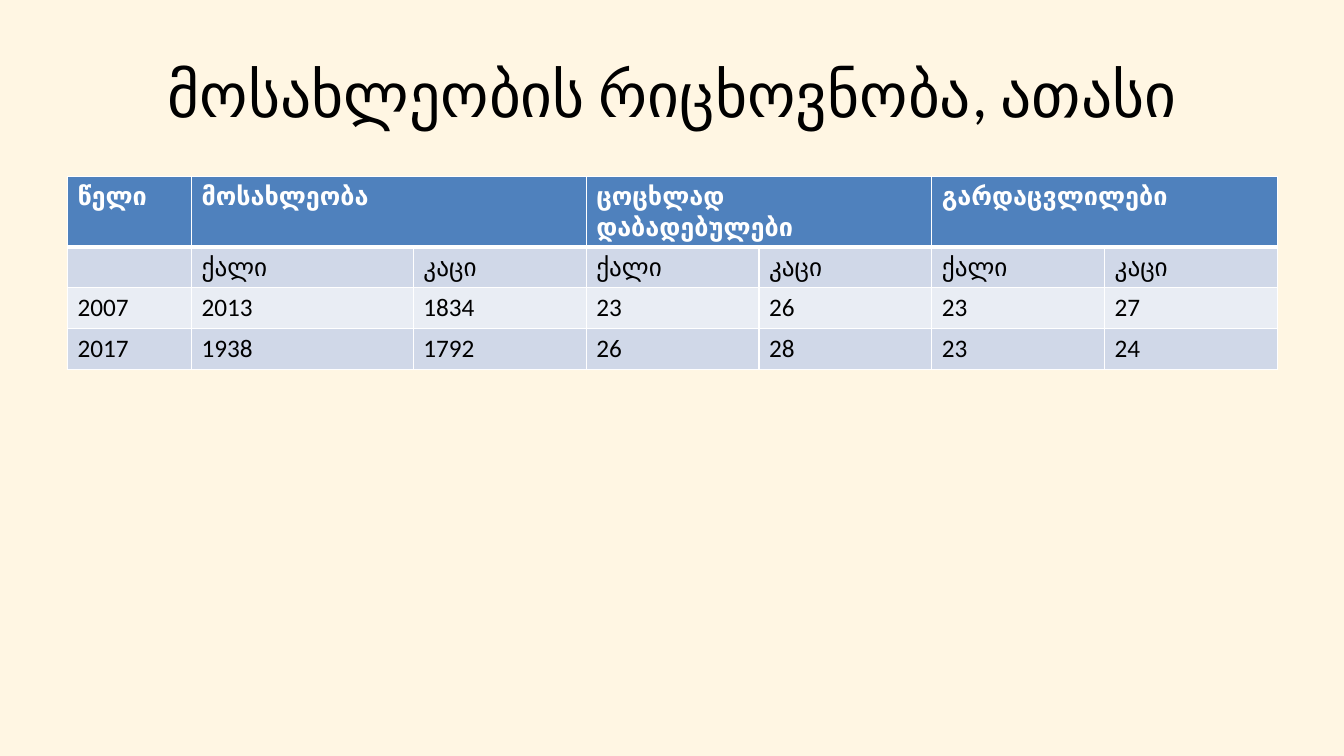
from dataclasses import dataclass

from lxml import etree
from pptx import Presentation
from pptx.dml.color import RGBColor
from pptx.enum.text import MSO_ANCHOR, PP_ALIGN
from pptx.oxml.ns import qn
from pptx.util import Inches, Pt

MIDDLE = MSO_ANCHOR.MIDDLE
CENTER = PP_ALIGN.CENTER


@dataclass(frozen=True)
class Theme:
    font: str = "Calibri"
    title_size: int = 44
    table_size: int = 18
    background: str = "FFF6E3"
    text: str = "000000"
    header_text: str = "FFFFFF"
    header_fill: str = "4F81BD"
    band_fills: tuple = ("D0D8E8", "E9EDF4")
    border: str = "FFFFFF"
    thin: int = 1
    thick: int = 3


THEME = Theme()

TITLE = "მოსახლეობის რიცხოვნობა, ათასი"
GROUPS = ["მოსახლეობა", "ცოცხლად დაბადებულები", "გარდაცვლილები"]
ROWS = [
    ["წელი"] + [text for group in GROUPS for text in (group, "")],
    [""] + ["ქალი", "კაცი"] * len(GROUPS),
    ["2007", "2013", "1834", "23", "26", "23", "27"],
    ["2017", "1938", "1792", "26", "28", "23", "24"],
]
COLUMN_WIDTHS = [1.23, 2.2] + [1.714] * 5
ROW_HEIGHT = 0.405


def style_text(text_frame, size, color, bold=False):
    for para in text_frame.paragraphs:
        for run in para.runs:
            run.font.name = THEME.font
            run.font.size = Pt(size)
            run.font.bold = bold
            run.font.color.rgb = RGBColor.from_string(color)


def add_title(page):
    box = page.shapes.add_textbox(Inches(0.67), Inches(0.3), Inches(12), Inches(1.25))
    frame = box.text_frame
    frame.word_wrap = True
    frame.vertical_anchor = MIDDLE
    frame.text = TITLE
    frame.paragraphs[0].alignment = CENTER
    style_text(frame, THEME.title_size, THEME.text)


def set_borders(cell, top, bottom):
    """Draw all four cell edges; must run before the cell is filled."""
    properties = cell._tc.get_or_add_tcPr()
    widths = {"a:lnL": THEME.thin, "a:lnR": THEME.thin, "a:lnT": top, "a:lnB": bottom}
    for tag, width in widths.items():
        line = etree.SubElement(properties, qn(tag), w=str(Pt(width)))
        fill = etree.SubElement(line, qn("a:solidFill"))
        etree.SubElement(fill, qn("a:srgbClr"), val=THEME.border)


def style_cell(cell, row):
    is_header = row == 0
    set_borders(
        cell,
        top=THEME.thick if row == 1 else THEME.thin,
        bottom=THEME.thick if is_header else THEME.thin,
    )
    color = THEME.header_fill if is_header else THEME.band_fills[(row - 1) % 2]
    cell.fill.solid()
    cell.fill.fore_color.rgb = RGBColor.from_string(color)
    text_color = THEME.header_text if is_header else THEME.text
    style_text(cell.text_frame, THEME.table_size, text_color, bold=is_header)


def add_population_table(page):
    table = page.shapes.add_table(
        len(ROWS), len(COLUMN_WIDTHS), Inches(0.67), Inches(1.75),
        Inches(12), Inches(ROW_HEIGHT * len(ROWS)),
    ).table
    for column, width in zip(table.columns, COLUMN_WIDTHS):
        column.width = Inches(width)
    for row_index, texts in enumerate(ROWS):
        table.rows[row_index].height = Inches(ROW_HEIGHT)
        for column_index, text in enumerate(texts):
            cell = table.cell(row_index, column_index)
            if text:
                cell.text_frame.text = text
            style_cell(cell, row_index)
    for first in range(1, len(COLUMN_WIDTHS), 2):
        table.cell(0, first).merge(table.cell(0, first + 1))


def main():
    deck = Presentation()
    deck.slide_width = Inches(13.33)
    deck.slide_height = Inches(7.5)
    page = deck.slides.add_slide(deck.slide_layouts[6])
    page.background.fill.solid()
    page.background.fill.fore_color.rgb = RGBColor.from_string(THEME.background)
    add_title(page)
    add_population_table(page)
    deck.save("out.pptx")


if __name__ == "__main__":
    main()
